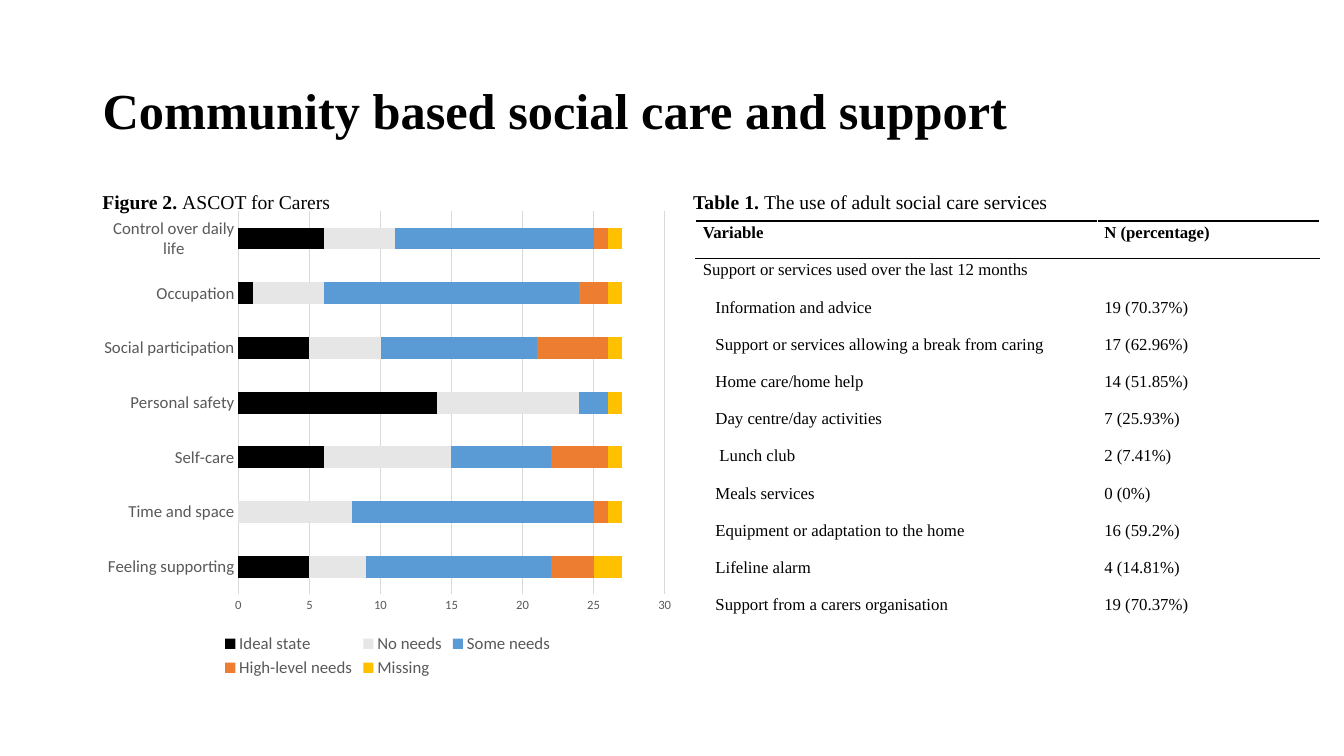
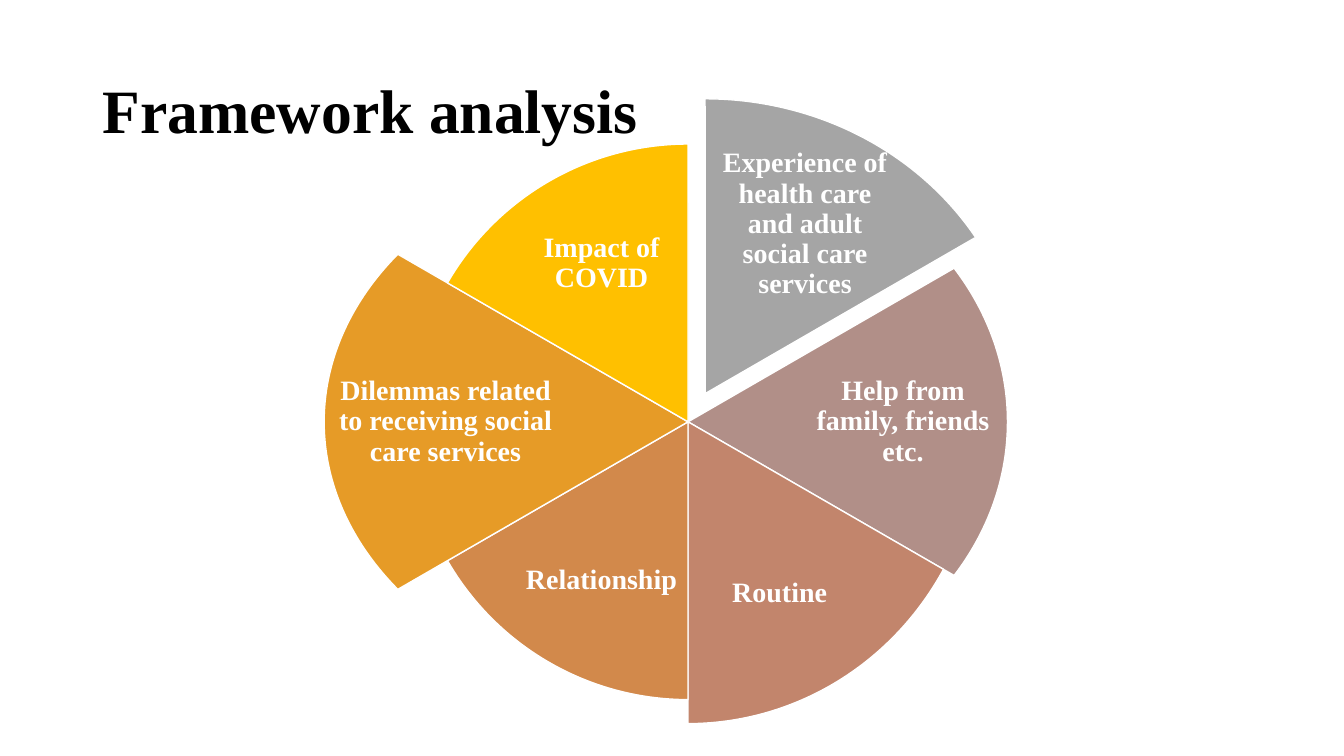
import pptx
import pptx.chart.data
import pptx.dml.color
import pptx.enum.chart
import pptx.enum.shapes
import pptx.enum.text
import pptx.oxml
import pptx.oxml.ns
import pptx.util
from dataclasses import dataclass

Cm = pptx.util.Cm
Pt = pptx.util.Pt


@dataclass(frozen=True)
class Theme:
    serif: str = "Times New Roman"
    sans: str = "Calibri"
    ink: str = "000000"
    paper: str = "FFFFFF"
    axis_text: str = "595959"
    grid: str = "D9D9D9"
    needs: tuple = ("000000", "E7E6E6", "5B9BD5", "ED7D31", "FFC000")
    themes: tuple = ("A5A5A5", "B18F88", "C2856C", "D2894B", "E69B27", "FFC000")
    title_large: int = 44
    title_small: int = 36
    wheel_label: int = 20
    caption: int = 14
    body: int = 12
    chart_base: int = 10
    scale: int = 9


THEME = Theme()


@dataclass(frozen=True)
class Box:
    left: float
    top: float
    width: float
    height: float

    def lengths(self):
        return Cm(self.left), Cm(self.top), Cm(self.width), Cm(self.height)

    def centred(self, dx, dy, width, height):
        return Box(self.left + self.width / 2 + dx - width / 2,
                   self.top + self.height / 2 + dy - height / 2, width, height)


NEEDS_AREAS = ["Feeling supporting", "Time and space", "Self-care", "Personal safety",
               "Social participation", "Occupation", "Control over daily life"]
NEEDS_COUNTS = {
    "Ideal state": [5, None, 6, 14, 5, 1, 6],
    "No needs": [4, 8, 9, 10, 5, 5, 5],
    "Some needs": [13, 17, 7, 2, 11, 18, 14],
    "High-level needs": [3, 1, 4, 0, 5, 2, 1],
    "Missing": [2, 1, 1, 1, 1, 1, 1],
}
FLUSH, INDENT, DEEP_INDENT = 0.18, 0.5, 0.6
SERVICES = [
    ("Variable", "N (percentage)", FLUSH),
    ("Support or services used over the last 12 months", "", FLUSH),
    ("Information and advice", "19 (70.37%)", INDENT),
    ("Support or services allowing a break from caring", "17 (62.96%)", INDENT),
    ("Home care/home help", "14 (51.85%)", INDENT),
    ("Day centre/day activities", "7 (25.93%)", INDENT),
    ("Lunch club", "2 (7.41%)", DEEP_INDENT),
    ("Meals services", "0 (0%)", INDENT),
    ("Equipment or adaptation to the home", "16 (59.2%)", INDENT),
    ("Lifeline alarm", "4 (14.81%)", INDENT),
    ("Support from a carers organisation", "19 (70.37%)", INDENT),
]
WHEEL = [
    ("Experience of health care and adult social care services",
     (0.43, -0.71, 16.08, 14.86), (2.95, -4.98, 4.7, 3.18)),
    ("Help from family, friends etc.", (0, 0, 16.1, 14), (5.42, 0, 4.88, 2.82)),
    ("Routine", (0, 0, 14.76, 15.21), (2.31, 4.33, 4.29, 3.25)),
    ("Relationship", (0, 0, 14, 14), (-2.18, 4, 4.09, 3)),
    ("Dilemmas related to receiving social care services",
     (0, 0, 18.34, 14), (-6.11, 0, 5.54, 2.82)),
    ("Impact of COVID", (0, 0, 14, 14), (-2.18, -4, 4.09, 3)),
]


def rgb(colour):
    return pptx.dml.color.RGBColor.from_string(colour)


def style_font(font, size, colour, face=THEME.serif, bold=False):
    font.name, font.size, font.bold = face, Pt(size), bold
    font.color.rgb = rgb(colour)


def titled_slide(deck, heading, size):
    slide = deck.slides.add_slide(deck.slide_layouts[5])
    title = slide.shapes.title
    title.left, title.top, title.width, title.height = Box(2.33, 1.01, 29.21, 3.68).lengths()
    title.text_frame.text = heading
    title.text_frame.vertical_anchor = pptx.enum.text.MSO_ANCHOR.MIDDLE
    paragraph = title.text_frame.paragraphs[0]
    paragraph.alignment = pptx.enum.text.PP_ALIGN.LEFT
    paragraph.line_spacing = 0.9
    style_font(paragraph.runs[0].font, size, THEME.ink, bold=True)
    return slide


def add_caption(slide, box, number, description):
    frame = slide.shapes.add_textbox(*box.lengths()).text_frame
    frame.word_wrap = True
    frame.auto_size = pptx.enum.text.MSO_AUTO_SIZE.SHAPE_TO_FIT_TEXT
    for words, bold in ((f"{number} ", True), (description, False)):
        run = frame.paragraphs[0].add_run()
        run.text = words
        style_font(run.font, THEME.caption, THEME.ink, bold=bold)


def add_needs_chart(slide, box):
    counts = pptx.chart.data.CategoryChartData()
    counts.categories = NEEDS_AREAS
    for need, values in NEEDS_COUNTS.items():
        counts.add_series(need, values)
    chart = slide.shapes.add_chart(
        pptx.enum.chart.XL_CHART_TYPE.BAR_STACKED, *box.lengths(), counts).chart
    chart.has_title = False
    style_font(chart.font, THEME.chart_base, THEME.ink, THEME.sans)

    plot = chart.plots[0]
    plot.gap_width, plot.overlap, plot.vary_by_categories = 150, 100, False
    for series, colour in zip(plot.series, THEME.needs):
        series.format.fill.solid()
        series.format.fill.fore_color.rgb = rgb(colour)

    areas, scale = chart.category_axis, chart.value_axis
    for axis, size in ((areas, THEME.body), (scale, THEME.scale)):
        axis.major_tick_mark = axis.minor_tick_mark = pptx.enum.chart.XL_TICK_MARK.NONE
        style_font(axis.tick_labels.font, size, THEME.axis_text, THEME.sans)
    scale.minimum_scale = 0
    scale.has_major_gridlines = True
    scale.format.line.fill.background()
    for line in (areas.format.line, scale.major_gridlines.format.line):
        line.color.rgb = rgb(THEME.grid)
        line.width = Pt(0.75)

    chart.has_legend = True
    chart.legend.position = pptx.enum.chart.XL_LEGEND_POSITION.BOTTOM
    chart.legend.include_in_layout = False
    style_font(chart.legend.font, THEME.body, THEME.axis_text, THEME.sans)


def rule_cell(cell, sides):
    properties = cell._tc.get_or_add_tcPr()
    for side in sides:
        properties.append(pptx.oxml.parse_xml(
            f'<a:{side} {pptx.oxml.ns.nsdecls("a")} w="12700"><a:solidFill>'
            f'<a:srgbClr val="{THEME.ink}"/></a:solidFill></a:{side}>'))


def add_services_table(slide, box, first_column=10.12):
    table = slide.shapes.add_table(len(SERVICES), 2, *box.lengths()).table
    table.first_row = table.horz_banding = False
    table.columns[0].width = Cm(first_column)
    table.columns[1].width = Cm(box.width - first_column)
    borders = {0: ("lnT", "lnB"), 1: ("lnT",)}
    for row, (service, users, indent) in enumerate(SERVICES):
        table.rows[row].height = Cm(box.height / len(SERVICES))
        for column, (words, margin) in enumerate(((service, indent), (users, FLUSH))):
            cell = table.cell(row, column)
            rule_cell(cell, borders.get(row, ()))
            cell.fill.background()
            cell.margin_left, cell.margin_right = Cm(margin), Cm(FLUSH)
            cell.margin_top = cell.margin_bottom = 0
            paragraph = cell.text_frame.paragraphs[0]
            paragraph.text = words
            paragraph.line_spacing = 1.15
            for run in paragraph.runs:
                style_font(run.font, THEME.body, THEME.ink, bold=row == 0)


def add_wheel_label(slide, box, words):
    frame = slide.shapes.add_textbox(*box.lengths()).text_frame
    frame.word_wrap = True
    frame.vertical_anchor = pptx.enum.text.MSO_ANCHOR.MIDDLE
    frame.margin_left = frame.margin_right = Cm(0.08)
    frame.margin_top = frame.margin_bottom = Cm(0.08)
    frame.text = words
    paragraph = frame.paragraphs[0]
    paragraph.alignment = pptx.enum.text.PP_ALIGN.CENTER
    paragraph.line_spacing = 0.9
    style_font(paragraph.runs[0].font, THEME.wheel_label, THEME.paper, bold=True)


def add_theme_wheel(slide, box):
    sweep = 360 / len(WHEEL)
    units_per_degree = 0.6
    for index, (words, slice_place, label_place) in enumerate(WHEEL):
        wedge = slide.shapes.add_shape(
            pptx.enum.shapes.MSO_SHAPE.PIE, *box.centred(*slice_place).lengths())
        start = 270 + index * sweep
        wedge.adjustments[0] = start % 360 * units_per_degree
        wedge.adjustments[1] = (start + sweep) % 360 * units_per_degree
        wedge.shadow.inherit = False
        wedge.fill.solid()
        wedge.fill.fore_color.rgb = rgb(THEME.themes[index])
        wedge.line.color.rgb = rgb(THEME.paper)
        wedge.line.width = Pt(1)
        add_wheel_label(slide, box.centred(*label_place), words)


def build_support_slide(deck):
    slide = titled_slide(deck, "Community based social care and support", THEME.title_small)
    add_needs_chart(slide, Box(2.33, 5.08, 14.88, 12.1))
    add_services_table(slide, Box(17.53, 5.57, 15.73, 10.31))
    add_caption(slide, Box(17.22, 4.65, 11.5, 0.86), "Table 1.",
                "The use of adult social care services")
    add_caption(slide, Box(2.33, 4.65, 11.5, 0.86), "Figure 2.", "ASCOT for Carers")


def build_framework_slide(deck):
    slide = titled_slide(deck, "Framework analysis", THEME.title_large)
    add_theme_wheel(slide, Box(8.17, 3.63, 18.34, 14))


def main():
    deck = pptx.Presentation()
    deck.slide_width, deck.slide_height = Cm(33.87), Cm(19.05)
    build_support_slide(deck)
    build_framework_slide(deck)
    deck.save("out.pptx")


if __name__ == "__main__":
    main()
